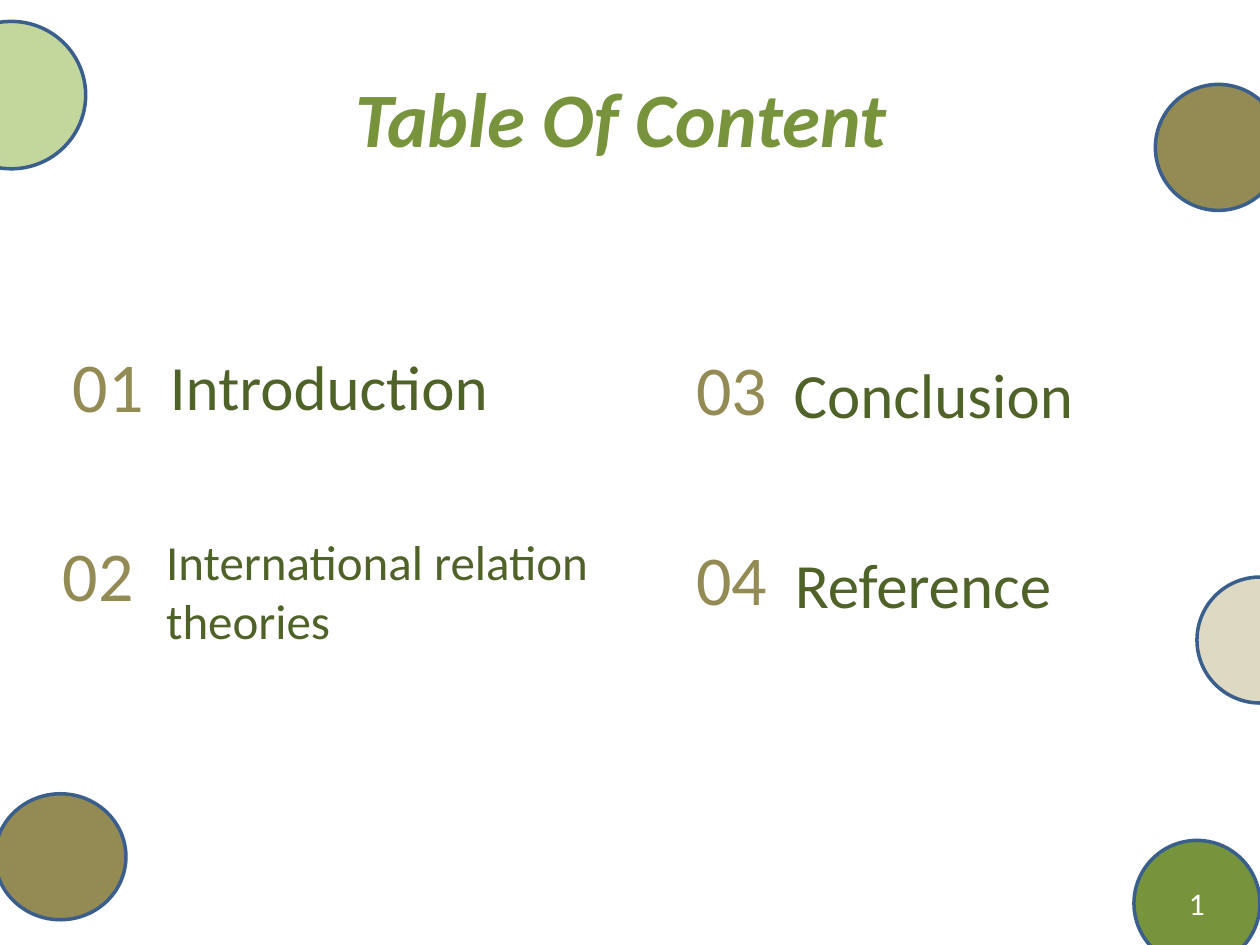
from pptx import Presentation
from pptx.dml.color import RGBColor
from pptx.enum import shapes, text
from pptx.util import Inches, Pt

COLORS = {
    "green": "77933C",
    "light green": "C3D69B",
    "dark green": "4F6228",
    "olive": "948A54",
    "sand": "DDD9C3",
    "outline": "3A5F8C",
    "white": "FFFFFF",
}


def color(name):
    return RGBColor.from_string(COLORS[name])


def write(shape, words, color_name, **formats):
    para = shape.text_frame.paragraphs[0]
    span = para.add_run()
    span.text = words
    span.font.name = "Calibri"
    span.font.color.rgb = color(color_name)
    for name, value in formats.items():
        setattr(span.font, name, value)
    return para


deck = Presentation()
deck.slide_width, deck.slide_height = Inches(10), Inches(7.5)
page = deck.slides.add_slide(deck.slide_layouts[5])

# Title
title = page.shapes.title
title.left, title.top = Inches(0.5), Inches(0.3)
title.width, title.height = Inches(9), Inches(1.25)
title.text_frame.vertical_anchor = text.MSO_ANCHOR.MIDDLE
para = write(title, "Table Of Content ", "green", size=Pt(44), bold=True, italic=True)
para.alignment = text.PP_ALIGN.CENTER

# Circles around the edges; one carries the page number
circles = [
    (-0.5, 0.17, 1.18, 1.17, "light green", ""),
    (9.17, 0.67, 1, 1, "olive", ""),
    (9, 6.67, 1, 1, "green", "1"),
    (-0.04, 6.3, 1.04, 1, "olive", ""),
    (9.5, 4.58, 1, 1, "sand", ""),
]
for *place, fill, number in circles:
    circle = page.shapes.add_shape(shapes.MSO_SHAPE.OVAL, *map(Inches, place))
    circle.shadow.inherit = False
    circle.fill.solid()
    circle.fill.fore_color.rgb = color(fill)
    circle.line.color.rgb = color("outline")
    circle.line.width = Pt(2)
    if number:
        circle.text_frame.vertical_anchor = text.MSO_ANCHOR.MIDDLE
        para = write(circle, number, "white", size=Pt(18))
        para.alignment = text.PP_ALIGN.CENTER

# Contents: number position, then heading position, width, height, size, wrapping
entries = [
    ("Introduction", 0.48, 2.67, 1.25, 2.71, 2.81, 0.71, 36, False),
    ("International relation theories", 0.4, 4.17, 1.22, 4.17, 4.02, 1.04, 28, True),
    ("Conclusion", 5.43, 2.69, 6.2, 2.77, 2.44, 0.71, 36, False),
    ("Reference", 5.43, 4.2, 6.21, 4.28, 2.25, 0.71, 36, False),
]
for index, (heading, left, top, *place, size, wrap) in enumerate(entries, 1):
    parts = [
        (f"{index:02}", (left, top, 0.77, 0.77), "olive", 40, False),
        (heading, place, "dark green", size, wrap),
    ]
    for words, bounds, color_name, points, wraps in parts:
        box = page.shapes.add_textbox(*map(Inches, bounds))
        box.text_frame.word_wrap = wraps
        box.text_frame.auto_size = text.MSO_AUTO_SIZE.SHAPE_TO_FIT_TEXT
        write(box, words, color_name, size=Pt(points))

deck.save("out.pptx")
